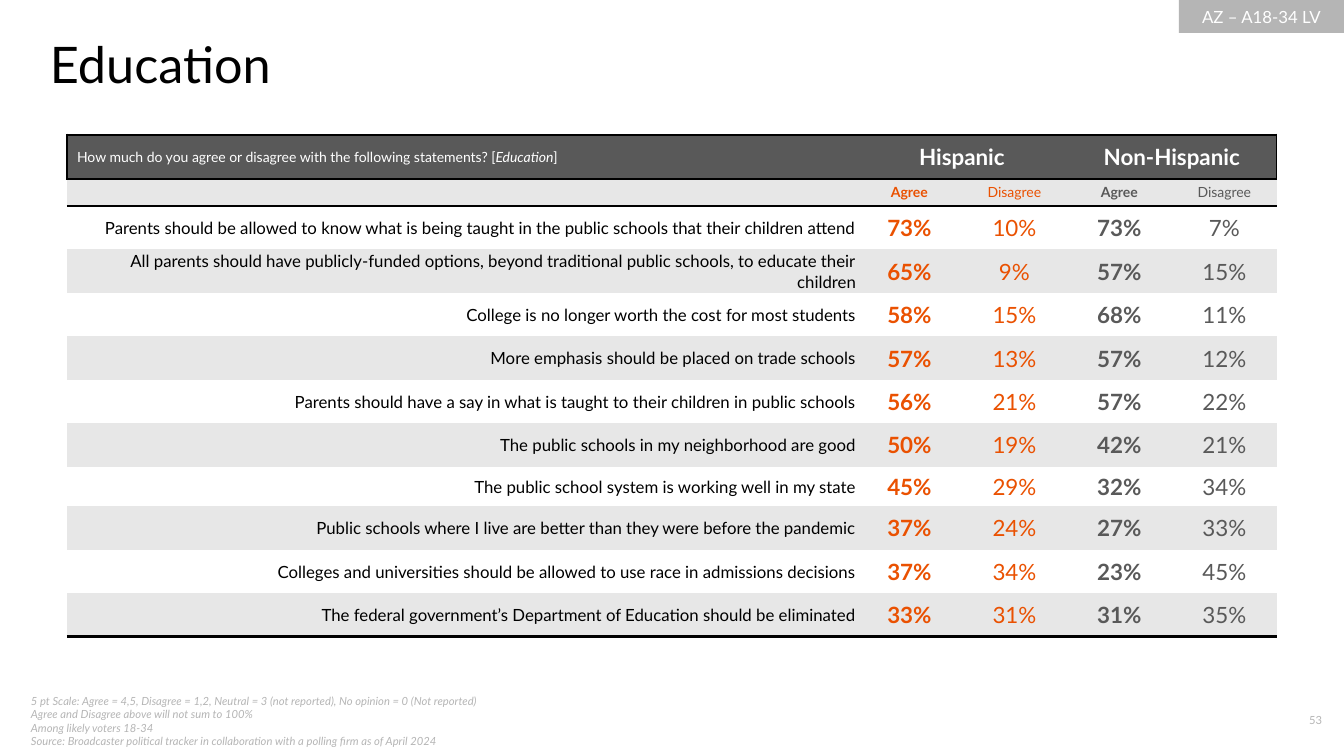
from lxml import etree
from pptx import Presentation
from pptx.dml.color import RGBColor
from pptx.enum.shapes import MSO_SHAPE
from pptx.enum.text import MSO_ANCHOR, PP_ALIGN
from pptx.oxml.ns import qn
from pptx.util import Emu, Pt

RECT = MSO_SHAPE.RECTANGLE
TOP, MIDDLE = MSO_ANCHOR.TOP, MSO_ANCHOR.MIDDLE
LEFT, CENTER, RIGHT = PP_ALIGN.LEFT, PP_ALIGN.CENTER, PP_ALIGN.RIGHT

PX = 914400 / 100.8
FONT = "Lato"
BLACK, WHITE = "000000", "FFFFFF"
ORANGE, DARK, STRIPE, MUTED = "EA5101", "595959", "E7E7E7", "B5B5B5"
NO_STYLE = "{2D5ABB26-0587-4C30-8999-92F81FD0307C}"

GROUPS = ["Hispanic", "Non-Hispanic"]
ANSWERS = ["Agree", "Disagree"] * 2
STATEMENTS = [
    ("Parents should be allowed to know what is being taught in the public schools that their children attend",
     73, 10, 73, 7),
    ("All parents should have publicly-funded options, beyond traditional public schools, to educate their children",
     65, 9, 57, 15),
    ("College is no longer worth the cost for most students", 58, 15, 68, 11),
    ("More emphasis should be placed on trade schools", 57, 13, 57, 12),
    ("Parents should have a say in what is taught to their children in public schools", 56, 21, 57, 22),
    ("The public schools in my neighborhood are good", 50, 19, 42, 21),
    ("The public school system is working well in my state", 45, 29, 32, 34),
    ("Public schools where I live are better than they were before the pandemic", 37, 24, 27, 33),
    ("Colleges and universities should be allowed to use race in admissions decisions", 37, 34, 23, 45),
    ("The federal government’s Department of Education should be eliminated", 33, 31, 31, 35),
]
SHORT_ROW = 6
FOOTNOTES = [
    "5 pt Scale: Agree = 4,5, Disagree = 1,2, Neutral = 3 (not reported), No opinion = 0 (Not reported)",
    "Agree and Disagree above will not sum to 100%",
    "Among likely voters 18-34\vSource: Broadcaster political tracker in collaboration with a polling firm"
    " as of April 2024",
]


def px(n):
    """Turn pixels into EMU."""
    return Emu(round(n * PX))


def rgb(value):
    """Turn a hex string into a colour."""
    return RGBColor.from_string(value)


def format_text(tf, size, color, align=LEFT, bold=False, italic=False):
    """Format every run of a text frame."""
    for p in tf.paragraphs:
        p.alignment = align
        for r in p.runs:
            r.font.name, r.font.size = FONT, Pt(size)
            r.font.bold, r.font.italic = bold, italic
            r.font.color.rgb = rgb(color)


def add_text(slide, box, text, size, color, align=LEFT, anchor=TOP, inset=True, italic=False):
    """Add a wrapping text box."""
    tf = slide.shapes.add_textbox(*map(px, box)).text_frame
    tf.word_wrap = True
    tf.vertical_anchor = anchor
    if not inset:
        tf.margin_left = tf.margin_right = tf.margin_top = tf.margin_bottom = 0
    tf.text = text
    format_text(tf, size, color, align, italic=italic)


def add_tag(slide, box, text):
    """Add the grey audience tag."""
    sp = slide.shapes.add_shape(RECT, *map(px, box))
    sp.shadow.inherit = False
    sp.fill.solid()
    sp.fill.fore_color.rgb = rgb(MUTED)
    sp.line.fill.background()
    tf = sp.text_frame
    tf.vertical_anchor = MIDDLE
    tf.text = text
    format_text(tf, 12, WHITE, CENTER)


def style_cell(cell, fill, borders):
    """Fill a cell and draw its borders, given as side and width pairs."""
    cell.vertical_anchor = MIDDLE
    tc_pr = cell._tc.get_or_add_tcPr()
    for side, width in borders:
        ln = etree.SubElement(tc_pr, qn(f"a:ln{side}"), w=str(Pt(width)))
        solid = etree.SubElement(ln, qn("a:solidFill"))
        etree.SubElement(solid, qn("a:srgbClr"), val=BLACK)
    cell.fill.solid()
    cell.fill.fore_color.rgb = rgb(fill)


def fill_header(table):
    """Fill the question row and the answer row."""
    for c in range(5):
        sides = [("L", 1)] if c == 0 else [("R", 1)] if c > 2 else []
        style_cell(table.cell(0, c), DARK, sides + [("T", 2.25), ("B", 2.25)])
        style_cell(table.cell(1, c), STRIPE, [("T", 2.25)])
    tf = table.cell(0, 0).text_frame
    p = tf.paragraphs[0]
    for part in ("How much do you agree or disagree with the following statements? [", "Education", "]"):
        p.add_run().text = part
    format_text(tf, 10, WHITE)
    p.runs[1].font.italic = True
    for i, group in enumerate(GROUPS):
        cell = table.cell(0, 1 + 2 * i)
        cell.merge(table.cell(0, 2 + 2 * i))
        cell.text_frame.text = group
        format_text(cell.text_frame, 16, WHITE, CENTER, bold=True)
    table.cell(1, 0).text_frame.paragraphs[0]._p.get_or_add_endParaRPr().set("sz", "1000")
    for c, answer in enumerate(ANSWERS, 1):
        tf = table.cell(1, c).text_frame
        tf.text = answer
        format_text(tf, 10, ORANGE if c < 3 else DARK, CENTER, bold=c % 2 == 1)


def fill_statement(table, row, statement, fill, borders):
    """Fill one row with a statement and its four shares."""
    for c, value in enumerate(statement):
        cell = table.cell(row, c)
        cell.margin_left = cell.margin_right = cell.margin_top = px(1)
        cell.margin_bottom = 0
        style_cell(cell, fill, borders)
        tf = cell.text_frame
        if c == 0:
            tf.text = value
            format_text(tf, 12, BLACK, RIGHT)
        else:
            tf.text = f"{value}%"
            format_text(tf, 16, ORANGE if c < 3 else DARK, CENTER, bold=c % 2 == 1)


def add_agreement_table(slide, box):
    """Add the table of agreement by group."""
    x, y, w, h = box
    share_w = 105
    frame = slide.shapes.add_table(len(STATEMENTS) + 2, 5, px(x), px(y), px(w), px(h))
    table = frame.table
    table.first_row = table.horz_banding = False
    table._tbl.tblPr.find(qn("a:tableStyleId")).text = NO_STYLE
    for c, col in enumerate(table.columns):
        col.width = px(share_w if c else w - 4 * share_w)
    table.rows[0].height, table.rows[1].height = px(44), px(27)
    fill_header(table)
    for i, statement in enumerate(STATEMENTS):
        striped = i % 2 == 1
        table.rows[i + 2].height = px(39 if i == SHORT_ROW else 44 if striped else 43)
        borders = [("B", 2.25)] if i == len(STATEMENTS) - 1 else []
        fill_statement(table, i + 2, statement, STRIPE if striped else WHITE, borders)


def add_footer(slide, box):
    """Add the footnotes at the left and the page number at the right."""
    x, y, w, h = box
    add_text(slide, (x, y, 515, h), "\n".join(FOOTNOTES), 8, MUTED, anchor=MIDDLE, italic=True)
    add_text(slide, (x + w - 89, y + 7, 89, 27), "53", 8, MUTED, RIGHT)


def main():
    """Build the slide and save it."""
    prs = Presentation()
    prs.slide_width, prs.slide_height = px(1344), px(756)
    slide = prs.slides.add_slide(prs.slide_layouts[6])
    add_footer(slide, (21, 701, 1311, 40))
    add_tag(slide, (1179, 0, 165, 33), "AZ – A18-34 LV")
    add_text(slide, (50, 33, 1210, 61), "Education", 36, BLACK, inset=False)
    add_agreement_table(slide, (67, 135, 1210, 502))
    prs.save("out.pptx")


if __name__ == "__main__":
    main()
